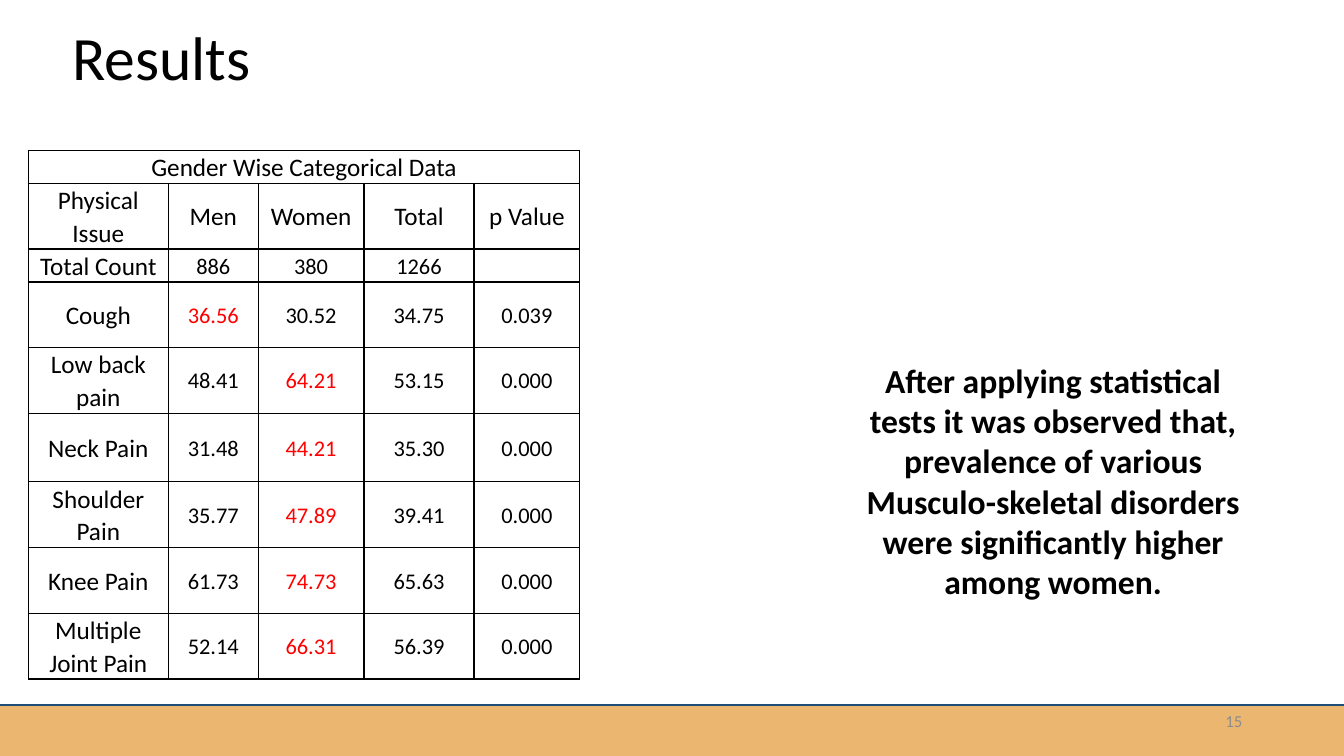
from dataclasses import dataclass

from lxml.etree import SubElement
from pptx import Presentation
from pptx.dml.color import RGBColor
from pptx.enum.shapes import MSO_SHAPE as Shape
from pptx.enum.text import MSO_ANCHOR as Anchor, PP_ALIGN as Align
from pptx.oxml.ns import qn
from pptx.util import Inches, Pt

SLIDE_W, SLIDE_H = Inches(13.33), Inches(7.5)
FONT = "Calibri"
BLACK, RED, GREY = "000000", "FF0000", "8C8C8C"
SAND, NAVY = "EBB66F", "1F4E79"


@dataclass
class Area:
    """Left, top, width and height in percent of the slide."""
    left: float
    top: float
    width: float
    height: float

    def box(self) -> tuple:
        return across(self.left), down(self.top), across(self.width), down(self.height)


@dataclass
class Issue:
    name: str
    men: str
    women: str
    total: str
    p_value: str
    height: float = 8.67

    def colors(self) -> list:
        """Mark the gender with the higher prevalence in red."""
        men_higher = float(self.men) > float(self.women)
        return [BLACK, RED if men_higher else BLACK, BLACK if men_higher else RED, BLACK, BLACK]

    def values(self) -> list:
        return [self.name, self.men, self.women, self.total, self.p_value]


@dataclass
class TextBlock:
    text: str
    area: Area
    size: int
    align: Align = Align.LEFT
    anchor: Anchor = Anchor.MIDDLE
    color: str = BLACK
    bold: bool = False
    spacing: float = 1.0


TABLE_AREA = Area(2.1, 19.87, 41.05, 69.33)
COLUMN_WIDTHS = [10.43, 6.68, 7.88, 8.18, 7.88]
CAPTION = "Gender Wise Categorical Data"
HEADINGS = ["Physical Issue", "Men", "Women", "Total", "p Value"]
COUNTS = ["Total Count", "886", "380", "1266", ""]
LOW_ROW, HEADING_ROW = 4.13, 8.53
ISSUES = [
    Issue("Cough", "36.56", "30.52", "34.75", "0.039"),
    Issue("Low back pain", "48.41", "64.21", "53.15", "0.000"),
    Issue("Neck Pain", "31.48", "44.21", "35.30", "0.000", height=9.07),
    Issue("Shoulder Pain", "35.77", "47.89", "39.41", "0.000"),
    Issue("Knee Pain", "61.73", "74.73", "65.63", "0.000"),
    Issue("Multiple Joint Pain", "52.14", "66.31", "56.39", "0.000"),
]
FOOTER_BAND = Area(-0.08, 93.2, 100.2, 6.93)
TEXT_BLOCKS = [
    TextBlock("Results", Area(4.65, 2.8, 86.42, 10.4), 44, spacing=0.9),
    TextBlock("15", Area(70.67, 92.67, 22.5, 5.33), 12, Align.RIGHT, color=GREY),
    TextBlock("After applying statistical tests it was observed that, prevalence of various "
              "Musculo-skeletal disorders were significantly higher among women.",
              Area(62.42, 46.93, 31.88, 33.6), 24, Align.CENTER, Anchor.TOP, bold=True),
]


def across(percent: float) -> int:
    return round(SLIDE_W * percent / 100)


def down(percent: float) -> int:
    return round(SLIDE_H * percent / 100)


def rgb(value: str) -> RGBColor:
    return RGBColor.from_string(value)


def write(frame, text: str, *, size: int, align=Align.CENTER, color: str = BLACK,
          bold: bool = False, spacing: float = 1.0) -> None:
    paragraph = frame.paragraphs[0]
    paragraph.alignment = align
    paragraph.line_spacing = spacing
    run = paragraph.add_run()
    run.text = text
    run.font.name, run.font.size, run.font.bold = FONT, Pt(size), bold
    run.font.color.rgb = rgb(color)


def add_text(slide, block: TextBlock) -> None:
    frame = slide.shapes.add_textbox(*block.area.box()).text_frame
    frame.word_wrap = True
    frame.vertical_anchor = block.anchor
    write(frame, block.text, size=block.size, align=block.align, color=block.color,
          bold=block.bold, spacing=block.spacing)


def add_footer(slide) -> None:
    band = slide.shapes.add_shape(Shape.RECTANGLE, *FOOTER_BAND.box())
    band.shadow.inherit = False
    band.fill.solid()
    band.fill.fore_color.rgb = rgb(SAND)
    band.line.color.rgb = rgb(NAVY)
    band.line.width = Pt(1.5)


def style_cell(cell) -> None:
    cell.margin_left = cell.margin_right = Inches(0.07)
    cell.margin_top = cell.margin_bottom = 0
    cell.vertical_anchor = Anchor.MIDDLE
    properties = cell._tc.get_or_add_tcPr()
    for edge in ("lnL", "lnR", "lnT", "lnB"):
        border = SubElement(properties, qn(f"a:{edge}"), w=str(Pt(1)))
        fill = SubElement(border, qn("a:solidFill"))
        SubElement(fill, qn("a:srgbClr"), val=BLACK)
    cell.fill.background()


def fill_row(table, row: int, values: list, colors: list, value_size: int) -> None:
    for column, (text, color) in enumerate(zip(values, colors)):
        if text:
            write(table.cell(row, column).text_frame, text, color=color, spacing=1.07,
                  size=value_size if column else 18)


def add_results_table(slide) -> None:
    heights = [LOW_ROW, HEADING_ROW, LOW_ROW] + [issue.height for issue in ISSUES]
    table = slide.shapes.add_table(len(heights), len(COLUMN_WIDTHS), *TABLE_AREA.box()).table
    table.first_row = table.horz_banding = False
    for column, width in zip(table.columns, COLUMN_WIDTHS):
        column.width = across(width)
    for row, height in zip(table.rows, heights):
        row.height = down(height)
    for cell in table.iter_cells():
        style_cell(cell)

    # Caption, headings and counts
    plain = [BLACK] * len(HEADINGS)
    table.cell(0, 0).merge(table.cell(0, len(HEADINGS) - 1))
    fill_row(table, 0, [CAPTION], plain, 18)
    fill_row(table, 1, HEADINGS, plain, 18)
    fill_row(table, 2, COUNTS, plain, 16)

    # Prevalence of each issue
    for row, issue in enumerate(ISSUES, start=3):
        fill_row(table, row, issue.values(), issue.colors(), 16)


def main() -> None:
    deck = Presentation()
    deck.slide_width, deck.slide_height = SLIDE_W, SLIDE_H
    slide = deck.slides.add_slide(deck.slide_layouts[6])
    add_footer(slide)
    add_results_table(slide)
    for block in TEXT_BLOCKS:
        add_text(slide, block)
    deck.save("out.pptx")


if __name__ == "__main__":
    main()
